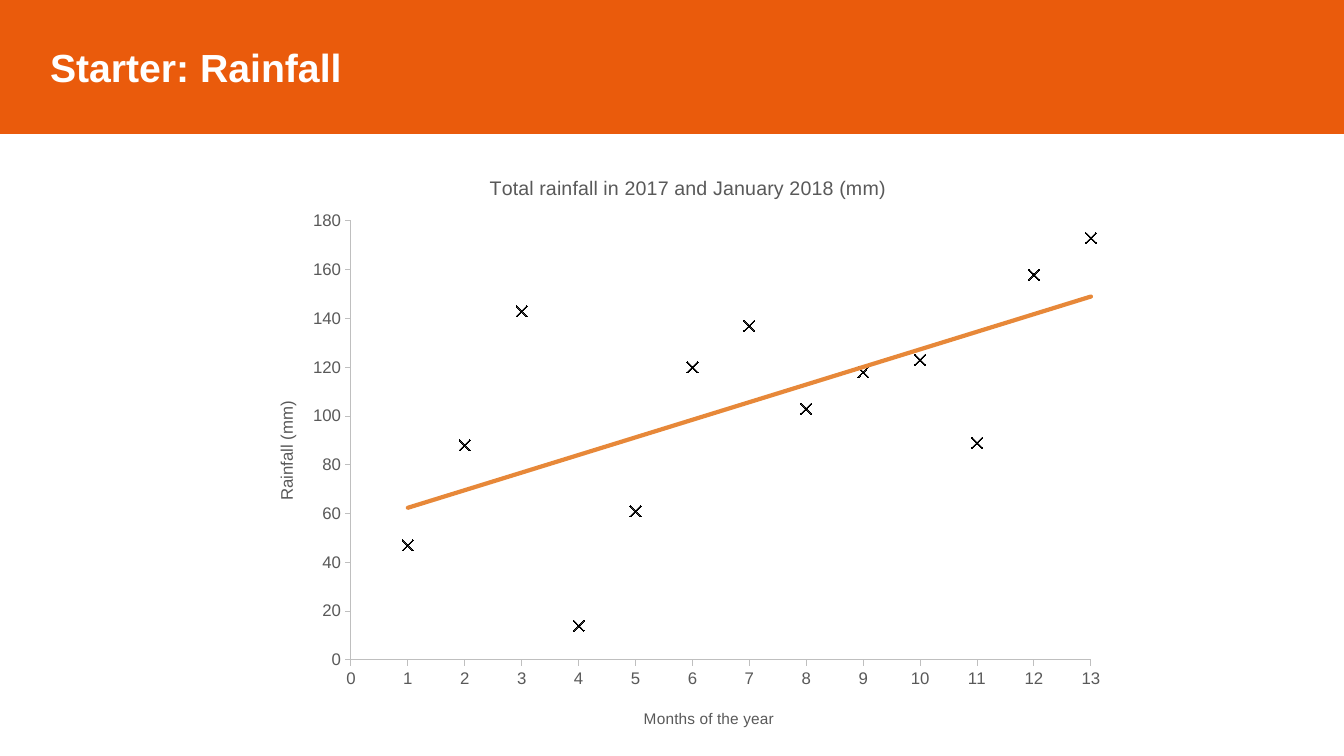
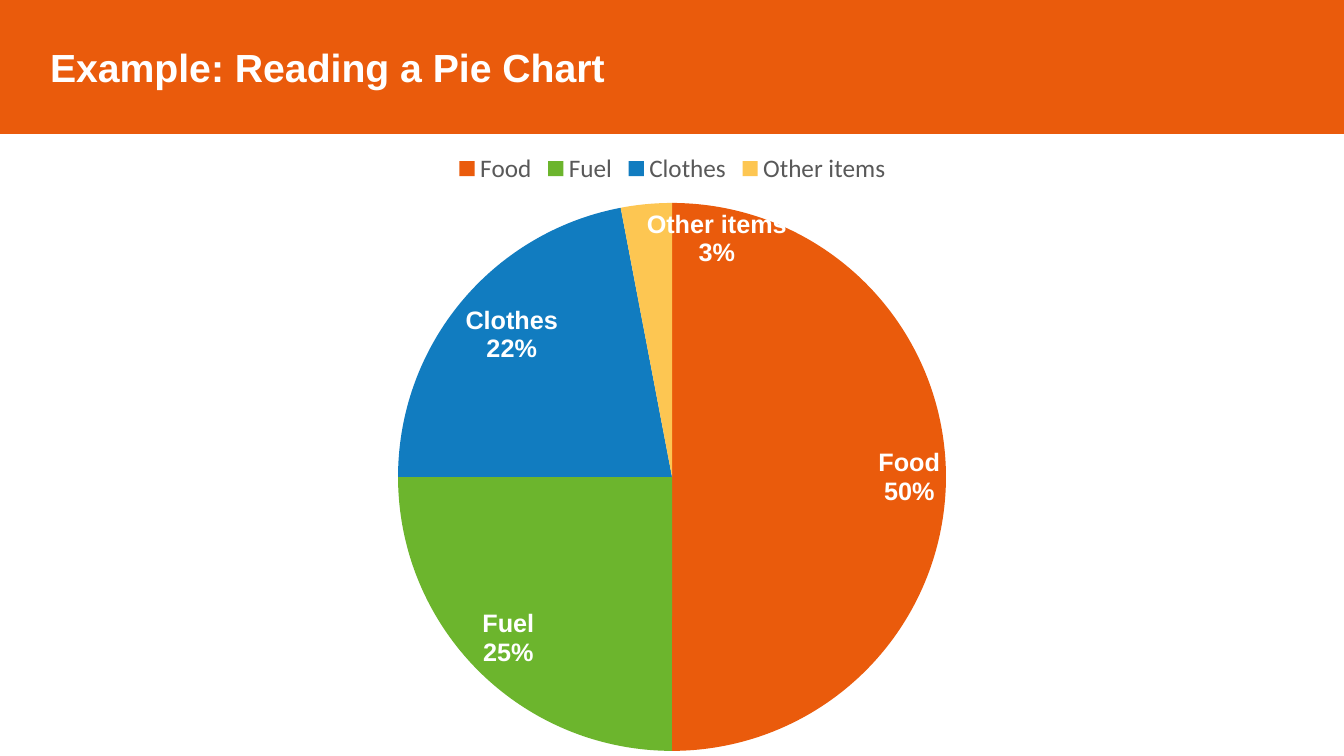
from lxml.etree import SubElement
from pptx import Presentation
from pptx.chart.data import CategoryChartData, XyChartData
from pptx.dml.color import RGBColor
from pptx.enum.chart import (XL_CHART_TYPE, XL_LABEL_POSITION, XL_LEGEND_POSITION,
                             XL_MARKER_STYLE, XL_TICK_MARK)
from pptx.enum.shapes import MSO_SHAPE
from pptx.enum.text import MSO_ANCHOR, PP_ALIGN
from pptx.oxml import parse_xml
from pptx.oxml.ns import nsdecls, qn
from pptx.util import Emu, Pt

WIDE, HIGH = 1344, 756
SCALE = 12192000 / WIDE

ORANGE = RGBColor(0xEA, 0x5B, 0x0C)
GREEN = RGBColor(0x6C, 0xB5, 0x2D)
BLUE = RGBColor(0x11, 0x7C, 0xC0)
YELLOW = RGBColor(0xFD, 0xC6, 0x52)
WHITE = RGBColor(0xFF, 0xFF, 0xFF)
BLACK = RGBColor(0, 0, 0)
GREY = RGBColor(0x59, 0x59, 0x59)
SILVER = RGBColor(0xBF, 0xBF, 0xBF)
TREND = RGBColor(0xE7, 0x88, 0x39)


def px(*nums):
    return [Emu(round(num * SCALE)) for num in nums]


def pin(node, box, spot, inner=False):
    """Fix a chart part at spot (slide px) inside the chart's box."""
    for old in node.findall(qn("c:layout")):
        node.remove(old)
    layout = parse_xml(f"<c:layout {nsdecls('c')}><c:manualLayout/></c:layout>")
    rule = layout[0]
    if inner:
        SubElement(rule, qn("c:layoutTarget")).set("val", "inner")
    for name in ("xMode", "yMode"):
        SubElement(rule, qn(f"c:{name}")).set("val", "edge")
    parts = [(spot[0] - box[0]) / box[2], (spot[1] - box[1]) / box[3]]
    parts += [size / full for size, full in zip(spot[2:], box[2:])]
    for name, part in zip("xywh", parts):
        SubElement(rule, qn(f"c:{name}")).set("val", f"{part:.4f}")
    node.insert(0 if inner else 1, layout)


deck = Presentation()
deck.slide_width, deck.slide_height = px(WIDE, HIGH)

# Slides with their title bands
slides = []
for title in ("Starter: Rainfall", "Example: Reading a Pie Chart"):
    slide = deck.slides.add_slide(deck.slide_layouts[6])
    band = slide.shapes.add_shape(MSO_SHAPE.RECTANGLE, *px(0, 0, WIDE, 133))
    band.shadow.inherit = False
    band.fill.solid()
    band.fill.fore_color.rgb = ORANGE
    band.line.color.rgb = ORANGE
    band.line.width = Pt(1)
    frame = band.text_frame
    frame.text = title
    frame.word_wrap = True
    frame.vertical_anchor = MSO_ANCHOR.MIDDLE
    frame.margin_left = px(50)[0]
    line = frame.paragraphs[0]
    line.alignment = PP_ALIGN.LEFT
    font = line.runs[0].font
    font.name, font.size, font.bold = "Arial", Pt(28), True
    font.color.rgb = WHITE
    slides.append(slide)

# Rainfall scatter chart
rain = [47, 88, 143, 14, 61, 120, 137, 103, 118, 123, 89, 158, 173]
data = XyChartData()
points = data.add_series("Series 1")
for month, depth in enumerate(rain, 1):
    points.add_data_point(month, depth)
box = (250, 150, 869, 594)
chart = slides[0].shapes.add_chart(XL_CHART_TYPE.XY_SCATTER, *px(*box), data).chart
chart.font.name, chart.font.size = "Arial", Pt(12)
chart.font.color.rgb = GREY
chart.has_legend = False
pin(chart.element.xpath(".//c:plotArea")[0], box, (351, 221, 740, 439), inner=True)

# Axes
across, up = chart.category_axis, chart.value_axis
for axis, top, step in ((across, 13, 1), (up, 180, 20)):
    axis.minimum_scale, axis.maximum_scale, axis.major_unit = 0, top, step
    axis.has_major_gridlines = False
    axis.major_tick_mark = XL_TICK_MARK.OUTSIDE
    axis.minor_tick_mark = XL_TICK_MARK.NONE
    axis.format.line.color.rgb = SILVER
    axis.format.line.width = Pt(0.75)
    font = axis.tick_labels.font
    font.name, font.size = "Arial", Pt(12)
    font.color.rgb = GREY

# Chart and axis titles
for title, text, size, spot, turn in (
        (chart.chart_title, "Total rainfall in 2017 and January 2018 (mm)", 14, (486, 172), 0),
        (across.axis_title, "Months of the year", 11, (641, 705), 0),
        (up.axis_title, "Rainfall (mm)", 12, (273, 398), -90)):
    frame = title.text_frame
    frame.text = text
    font = frame.paragraphs[0].runs[0].font
    font.name, font.size, font.bold = "Arial", Pt(size), False
    font.color.rgb = GREY
    title.element.xpath(".//a:bodyPr")[0].set("rot", str(turn * 60000))
    pin(title.element, box, spot)

# Crosses and trend line
series = chart.plots[0].series[0]
series.format.line.fill.background()
mark = series.marker
mark.style, mark.size = XL_MARKER_STYLE.X, 8
mark.format.fill.background()
mark.format.line.color.rgb = BLACK
chart.element.xpath(".//c:xVal")[0].addprevious(parse_xml(
    f'<c:trendline {nsdecls("c", "a")}><c:spPr><a:ln w="{Pt(3)}" cap="rnd"><a:solidFill>'
    f'<a:srgbClr val="{TREND}"/></a:solidFill></a:ln></c:spPr>'
    '<c:trendlineType val="linear"/><c:dispRSqr val="0"/><c:dispEq val="0"/></c:trendline>'))

# Spending pie chart
data = CategoryChartData()
data.categories = ["Food", "Fuel", "Clothes", "Other items"]
data.add_series("Series 1", [50, 25, 22, 3])
box = (256, 141, 833, 623)
chart = slides[1].shapes.add_chart(XL_CHART_TYPE.PIE, *px(*box), data).chart
chart.has_title = False
chart.has_legend = True
legend = chart.legend
legend.position = XL_LEGEND_POSITION.TOP
legend.include_in_layout = False
legend.font.name, legend.font.size = "Calibri", Pt(18)
legend.font.color.rgb = GREY
pin(chart.element.xpath(".//c:plotArea")[0], box, (398, 203, 548, 548), inner=True)

# Slices and their labels
plot = chart.plots[0]
plot.vary_by_categories = True
for spot, shade in enumerate((ORANGE, GREEN, BLUE, YELLOW)):
    fill = plot.series[0].points[spot].format.fill
    fill.solid()
    fill.fore_color.rgb = shade
plot.has_data_labels = True
labels = plot.data_labels
labels.show_value = False
labels.show_category_name = labels.show_percentage = True
labels.number_format, labels.number_format_is_linked = "0%", False
labels.position = XL_LABEL_POSITION.INSIDE_END
font = labels.font
font.name, font.size, font.bold = "Arial", Pt(18), True
font.color.rgb = WHITE

deck.save("out.pptx")
